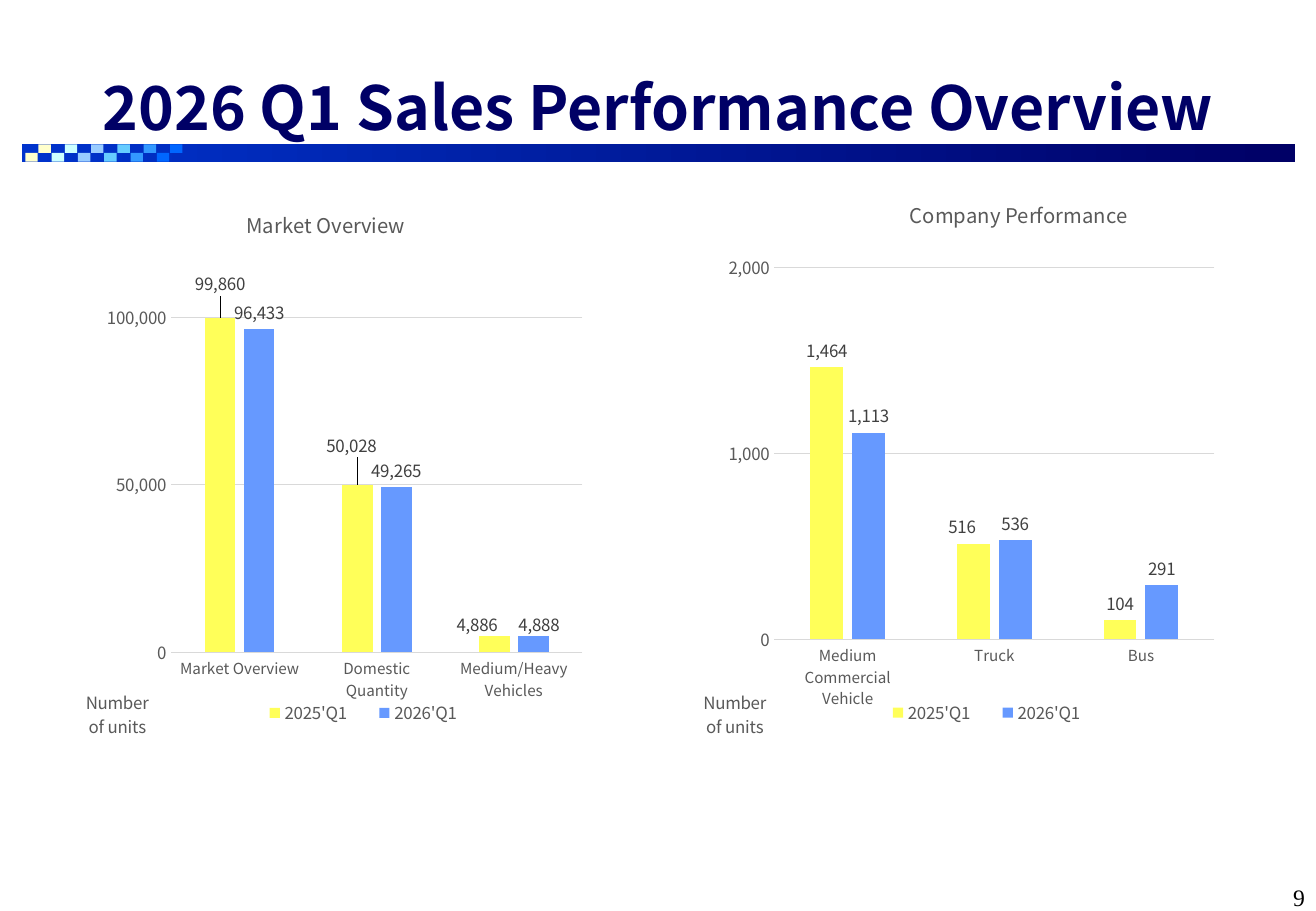
from lxml.etree import SubElement
from pptx import Presentation
from pptx.chart.data import CategoryChartData
from pptx.dml.color import RGBColor
from pptx.enum.chart import XL_CHART_TYPE, XL_LABEL_POSITION, XL_LEGEND_POSITION, XL_TICK_MARK
from pptx.enum.shapes import MSO_SHAPE
from pptx.enum.text import MSO_ANCHOR, PP_ALIGN
from pptx.oxml import parse_xml
from pptx.oxml.ns import nsdecls, qn
from pptx.util import Cm, Pt

NAVY = RGBColor(0x00, 0x00, 0x66)
ROYAL = RGBColor(0x00, 0x33, 0xCC)
BLACK = RGBColor(0x00, 0x00, 0x00)
GRAY = RGBColor(0x59, 0x59, 0x59)
DARK_GRAY = RGBColor(0x40, 0x40, 0x40)
LIGHT_GRAY = RGBColor(0xD9, 0xD9, 0xD9)
YELLOW = RGBColor(0xFF, 0xFF, 0x59)
BLUE = RGBColor(0x66, 0x99, 0xFF)
CHECKER_COLORS = [
    RGBColor(0xFF, 0xFF, 0xCC), RGBColor(0xCC, 0xFF, 0xFF), RGBColor(0x99, 0xCC, 0xFF),
    RGBColor(0x66, 0xCC, 0xFF), RGBColor(0x33, 0x99, 0xFF), RGBColor(0x00, 0x66, 0xFF),
]
SANS = "Noto Sans CJK SC"
SERIF = "Times New Roman"


def set_font(font, size=10, color=GRAY, name=SANS, bold=False):
    font.size, font.name, font.bold = Pt(size), name, bold
    font.color.rgb = color


def write_text(text_frame, text, align=PP_ALIGN.CENTER, **font_format):
    """Write one paragraph per line of text."""
    for index, line in enumerate(text.split("\n")):
        paragraph = text_frame.add_paragraph() if index else text_frame.paragraphs[0]
        paragraph.alignment = align
        run = paragraph.add_run()
        run.text = line
        set_font(run.font, **font_format)


def set_layout(element, index, **settings):
    """Place a chart part by hand, as fractions of the chart."""
    for old_layout in element.findall(qn("c:layout")):
        element.remove(old_layout)
    layout = parse_xml(f"<c:layout {nsdecls('c')}><c:manualLayout/></c:layout>")
    for tag, value in settings.items():
        SubElement(layout[0], qn(f"c:{tag}")).set("val", str(value))
    element.insert(index, layout)


class SlideBuilder:
    def __init__(self, slide):
        self.slide = slide

    def rectangle(self, left, top, width, height, color, end_color=None):
        shape = self.slide.shapes.add_shape(
            MSO_SHAPE.RECTANGLE, Cm(left), Cm(top), Cm(width), Cm(height))
        shape.shadow.inherit = False
        shape.line.fill.background()
        if end_color is None:
            shape.fill.solid()
            shape.fill.fore_color.rgb = color
        else:
            shape.fill.gradient()
            shape.fill.gradient_angle = 0
            for stop, stop_color in zip(shape.fill.gradient_stops, (color, end_color)):
                stop.color.rgb = stop_color

    def text(self, left, top, width, height, text, anchor, **text_format):
        text_frame = self.slide.shapes.add_textbox(
            Cm(left), Cm(top), Cm(width), Cm(height)).text_frame
        text_frame.word_wrap = True
        text_frame.vertical_anchor = anchor
        text_frame.margin_top = text_frame.margin_bottom = 0
        write_text(text_frame, text, **text_format)

    def column_chart(self, left, top, width, height, title, categories, series_values,
                     maximum, major_unit, plot, title_at, unit_at, legend_at, label_shifts):
        data = CategoryChartData(number_format="#,##0")
        data.categories = categories
        for name, values in series_values.items():
            data.add_series(name, values)
        chart = self.slide.shapes.add_chart(
            XL_CHART_TYPE.COLUMN_CLUSTERED, Cm(left), Cm(top), Cm(width), Cm(height), data).chart
        set_font(chart.font, color=BLACK)
        x, y, w, h = plot
        set_layout(chart._chartSpace.chart.plotArea, 0, layoutTarget="inner",
                   xMode="edge", yMode="edge", x=x, y=y, w=w, h=h)

        # Titles of the chart and of the value axis
        value_axis = chart.value_axis
        for heading, text, size, (x, y) in (
                (chart.chart_title, title, 12, title_at),
                (value_axis.axis_title, "Number\nof units", 10, unit_at)):
            write_text(heading.text_frame, text, size=size)
            heading.text_frame._txBody.find(qn("a:bodyPr")).set("rot", "0")
            set_layout(heading._element, 1, xMode="edge", yMode="edge", x=x, y=y)

        # Axes
        value_axis.minimum_scale, value_axis.maximum_scale = 0, maximum
        value_axis.major_unit = major_unit
        value_axis.format.line.fill.background()
        value_axis.tick_labels.number_format = "#,##0"
        value_axis.tick_labels.number_format_is_linked = False
        for axis, size in ((value_axis, 10), (chart.category_axis, 9)):
            axis.major_tick_mark = axis.minor_tick_mark = XL_TICK_MARK.NONE
            set_font(axis.tick_labels.font, size=size)
        for line in (value_axis.major_gridlines.format.line, chart.category_axis.format.line):
            line.color.rgb = LIGHT_GRAY
            line.width = Pt(0.75)

        # Legend
        chart.has_legend = True
        chart.legend.position = XL_LEGEND_POSITION.BOTTOM
        chart.legend.include_in_layout = False
        set_font(chart.legend.font)
        x, y, w, h = legend_at
        set_layout(chart.legend._element, 1, xMode="edge", yMode="edge", x=x, y=y, w=w, h=h)

        # Columns and their labels
        columns = chart.plots[0]
        columns.gap_width, columns.overlap = 219, -27
        columns.vary_by_categories = False
        for series, color in zip(columns.series, (YELLOW, BLUE)):
            series.invert_if_negative = False
            series.format.fill.solid()
            series.format.fill.fore_color.rgb = color
            labels = series.data_labels
            labels.show_value = True
            labels.number_format, labels.number_format_is_linked = "#,##0", False
            labels.position = XL_LABEL_POSITION.OUTSIDE_END
            set_font(labels.font, color=DARK_GRAY)
        for (series_index, point_index), (x, y) in label_shifts.items():
            label = columns.series[series_index].points[point_index].data_label
            set_font(label.font, color=DARK_GRAY)
            label.position = XL_LABEL_POSITION.OUTSIDE_END
            set_layout(label._get_or_add_dLbl(), 1, x=x, y=y)


def main():
    presentation = Presentation()
    presentation.slide_width, presentation.slide_height = Cm(27.51), Cm(19.05)
    builder = SlideBuilder(presentation.slides.add_slide(presentation.slide_layouts[6]))

    # Page number
    builder.text(21.79, 17.78, 5.74, 1.27, "9", MSO_ANCHOR.BOTTOM,
                 align=PP_ALIGN.RIGHT, size=14, color=BLACK, name=SERIF)

    # Gradient band with a two-row checker
    builder.rectangle(0.46, 3.02, 26.62, 0.36, ROYAL, NAVY)
    for index in range(2 * len(CHECKER_COLORS)):
        top = 3.02 if index % 2 else 3.2
        builder.rectangle(0.53 + 0.275 * index, top, 0.26, 0.18, CHECKER_COLORS[index // 2])

    # Heading
    builder.text(1.22, 1.47, 25.07, 1.52, "2026 Q1 Sales Performance Overview",
                 MSO_ANCHOR.MIDDLE, size=36, color=NAVY, bold=True)

    # Charts
    builder.column_chart(
        0.76, 3.78, 11.99, 11.84, "Market Overview",
        ["Market Overview", "Domestic Quantity", "Medium/Heavy Vehicles"],
        {"2025'Q1": (99860, 50028, 4886), "2026'Q1": (96433, 49265, 4888)},
        maximum=120000, major_unit=50000, plot=(0.235, 0.123, 0.717, 0.71),
        title_at=(0.36, 0.04), unit_at=(0.08, 0.89), legend_at=(0.36, 0.91, 0.42, 0.06),
        label_shifts={(0, 0): (0, -0.03), (0, 1): (-0.01, -0.04),
                      (0, 2): (-0.03, 0.01), (1, 2): (0.01, 0.01)})
    builder.column_chart(
        13.79, 3.68, 11.99, 11.94, "Company Performance",
        ["Medium Commercial Vehicle", "Truck", "Bus"],
        {"2025'Q1": (1464, 516, 104), "2026'Q1": (1113, 536, 291)},
        maximum=2000, major_unit=1000, plot=(0.2, 0.161, 0.767, 0.651),
        title_at=(0.43, 0.03), unit_at=(0.07, 0.89), legend_at=(0.36, 0.91, 0.42, 0.06),
        label_shifts={(0, 1): (-0.02, 0)})

    presentation.save("out.pptx")


if __name__ == "__main__":
    main()
